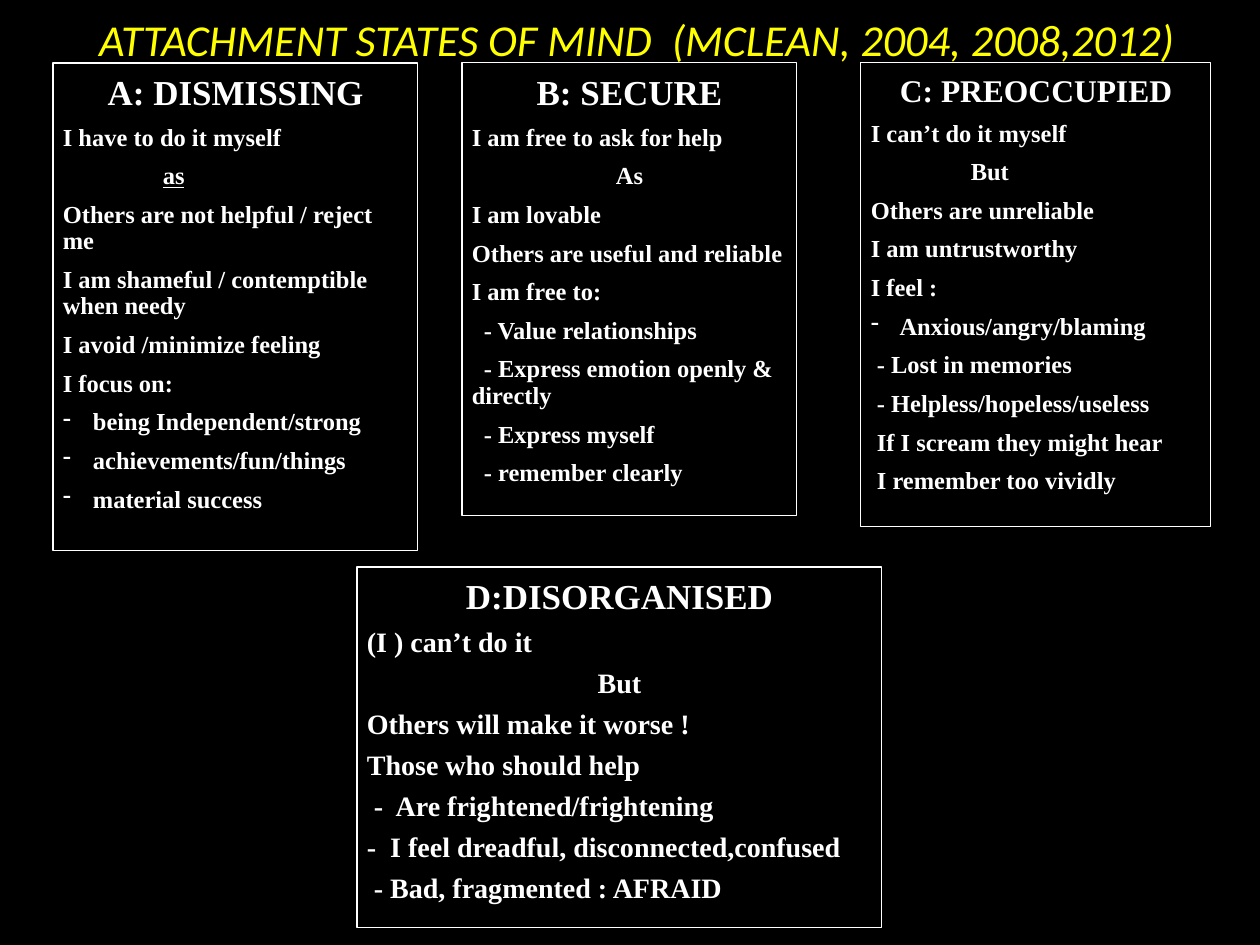
"""Slide of four attachment states of mind, each in an outlined panel."""
from pptx import Presentation, util as u
from pptx.dml.color import RGBColor
from pptx.enum import shapes, text
from pptx.oxml.ns import qn
from lxml import etree


def paint(font, name, size, color):
    font.name, font.size = name, u.Pt(size)
    font.color.rgb = RGBColor.from_string(color)


def add_prop(para, *tags):
    node = para._p.get_or_add_pPr()
    for tag, attrs in tags:
        node = etree.SubElement(node, qn(tag), attrs)


deck = Presentation()
deck.slide_width, deck.slide_height = u.Inches(12.6), u.Inches(9.45)
slide = deck.slides.add_slide(deck.slide_layouts[6])
back = slide.background.fill
back.solid()
back.fore_color.rgb = RGBColor.from_string("000000")

title = slide.shapes.add_textbox(u.Inches(0.49), u.Inches(0.3), u.Inches(11.76), u.Inches(0.18))
frame = title.text_frame
frame.word_wrap = True
frame.vertical_anchor = text.MSO_ANCHOR.MIDDLE
head = frame.paragraphs[0]
head.text = "ATTACHMENT STATES OF MIND  (MCLEAN, 2004, 2008,2012)"
head.alignment = text.PP_ALIGN.CENTER
paint(head.runs[0].font, "Calibri", 31.8, "FFFF00")
head.runs[0].font.italic = True

# Line marks: ^ centred, * dash bullet, > small indent, | one-inch indent, _ the same underlined
indents = {">": 0.12, "|": 1, "_": 1}
panels = [
    (0.53, 0.63, 3.65, 4.88, 25.2, 17.6, 0.9, [
        "^A: DISMISSING", "I have to do it myself", "_as",
        "Others are not helpful / reject me",
        "I am shameful / contemptible when needy",
        "I avoid /minimize feeling", "I focus on:",
        "* being Independent/strong", "* achievements/fun/things",
        "* material success"]),
    (4.62, 0.63, 3.35, 4.53, 25.2, 17.6, 0.9, [
        "^B: SECURE", "I am free to ask for help", "^As", "I am lovable",
        "Others are useful and reliable", "I am free to:",
        ">- Value relationships", ">- Express emotion openly & directly",
        ">- Express myself", ">- remember clearly"]),
    (8.61, 0.63, 3.5, 4.64, 22.7, 17.6, 0.9, [
        "^C: PREOCCUPIED", "I can’t do it myself", "|But",
        "Others are unreliable", "I am untrustworthy", "I feel :",
        "* Anxious/angry/blaming", " - Lost in memories",
        " - Helpless/hopeless/useless", " If I scream they might hear",
        " I remember too vividly"]),
    (3.57, 5.67, 5.25, 3.61, 25.2, 20.2, 0.8, [
        "^D:DISORGANISED", "(I ) can’t do it", "^But",
        "Others will make it worse !", "Those who should help",
        " -  Are frightened/frightening",
        "-  I feel dreadful, disconnected,confused",
        " - Bad, fragmented : AFRAID"]),
]

for left, top, width, height, big, small, pitch, lines in panels:
    panel = slide.shapes.add_shape(
        shapes.MSO_SHAPE.RECTANGLE, *map(u.Inches, (left, top, width, height)))
    panel.shadow.inherit = False
    panel.fill.background()
    panel.line.color.rgb = RGBColor.from_string("FFFFFF")
    panel.line.width = u.Pt(0.75)
    frame = panel.text_frame
    frame.word_wrap = True
    frame.vertical_anchor = text.MSO_ANCHOR.TOP
    frame.margin_top = u.Inches(0.08)
    for row, line in enumerate(lines):
        para = frame.paragraphs[0] if row == 0 else frame.add_paragraph()
        mark = line[0] if line[0] in "^*>|_" else ""
        para.text = line[len(mark):]
        para.alignment = text.PP_ALIGN.CENTER if mark == "^" else text.PP_ALIGN.LEFT
        if row:
            para.line_spacing = pitch
            add_prop(para, ("a:spcBef", {}), ("a:spcPct", {"val": "50000"}))
        props = para._p.get_or_add_pPr()
        if mark in indents:
            props.set("indent", str(u.Inches(indents[mark])))
        if mark == "*":
            props.set("marL", str(u.Inches(0.24)))
            props.set("indent", str(u.Inches(-0.24)))
            add_prop(para, ("a:buChar", {"char": "-"}))
        font = para.runs[0].font
        paint(font, "Times New Roman", small if row else big, "FFFFFF")
        font.bold = True
        if mark == "_":
            font.underline = True

deck.save("out.pptx")
